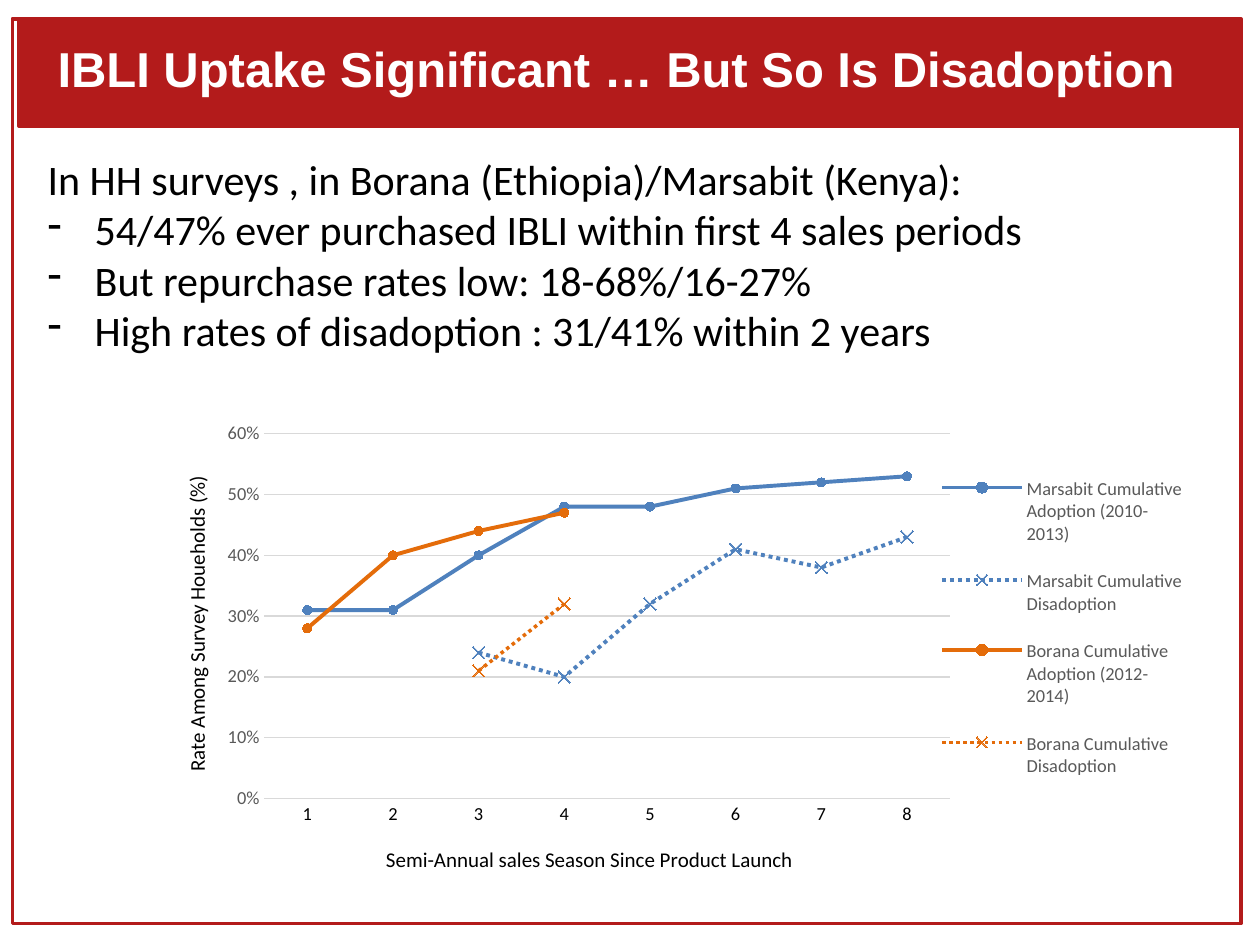
from lxml.etree import SubElement
from pptx import Presentation
from pptx.chart.data import CategoryChartData
from pptx.dml.color import RGBColor
from pptx.enum.chart import XL_CHART_TYPE, XL_LEGEND_POSITION, XL_MARKER_STYLE, XL_TICK_MARK
from pptx.enum.dml import MSO_LINE
from pptx.enum.shapes import MSO_SHAPE
from pptx.enum.text import MSO_ANCHOR, PP_ALIGN
from pptx.oxml import parse_xml
from pptx.oxml.ns import nsdecls, qn
from pptx.util import Cm, Pt

COLORS = {
    "red": "B31B1B", "white": "FFFFFF", "black": "000000", "gray": "595959",
    "grid": "D9D9D9", "marsabit": "4F81BD", "borana": "E46C0A",
}


def style_font(font, size, color, name="Calibri", bold=False):
    font.size, font.name, font.bold = Pt(size), name, bold
    font.color.rgb = RGBColor.from_string(COLORS[color])


def set_layout(element, index, **fractions):
    """Give a chart part a manual layout in fractions of the chart area."""
    for old in element.findall(qn("c:layout")):
        element.remove(old)
    layout = parse_xml(f"<c:layout {nsdecls('c')}><c:manualLayout/></c:layout>")
    manual = layout[0]
    if index == 0:
        SubElement(manual, qn("c:layoutTarget")).set("val", "inner")
    for key in ("x", "y"):
        SubElement(manual, qn(f"c:{key}Mode")).set("val", "edge")
    for key, value in fractions.items():
        SubElement(manual, qn(f"c:{key}")).set("val", str(value))
    element.insert(index, layout)


presentation = Presentation()
presentation.slide_width, presentation.slide_height = Cm(25.4), Cm(19.05)
slide = presentation.slides.add_slide(presentation.slide_layouts[5])

# Frame and title band
for left, top, width, height, fill in (
    (0.25, 0.38, 24.77, 18.24, "white"),
    (0.38, 0.38, 24.61, 2.16, "red"),
):
    shape = slide.shapes.add_shape(
        MSO_SHAPE.RECTANGLE, Cm(left), Cm(top), Cm(width), Cm(height))
    shape.shadow.inherit = False
    shape.fill.solid()
    shape.fill.fore_color.rgb = RGBColor.from_string(COLORS[fill])
    shape.line.color.rgb = RGBColor.from_string(COLORS["red"])
    shape.line.width = Pt(2)

# Title, brought in front of the band
title = slide.shapes.title
title.left, title.top, title.width, title.height = Cm(0.64), Cm(0.64), Cm(24.13), Cm(1.45)
title.element.getparent().append(title.element)
title.text_frame.text = "IBLI Uptake Significant … But So Is Disadoption"
title.text_frame.vertical_anchor = MSO_ANCHOR.MIDDLE
title.text_frame.margin_left = Cm(0.52)
paragraph = title.text_frame.paragraphs[0]
paragraph.alignment = PP_ALIGN.LEFT
style_font(paragraph.font, 28, "white", "Arial", True)

# Survey findings: a lead-in and dashed points
findings = slide.shapes.add_textbox(Cm(0.71), Cm(2.97), Cm(21.79), Cm(5.38))
findings.text_frame.word_wrap = True
findings.text_frame.text = "\n".join((
    "In HH surveys , in Borana (Ethiopia)/Marsabit (Kenya):",
    "54/47% ever purchased IBLI within first 4 sales periods",
    "But repurchase rates low: 18-68%/16-27%",
    "High rates of disadoption : 31/41% within 2 years",
))
for number, paragraph in enumerate(findings.text_frame.paragraphs):
    style_font(paragraph.font, 24, "black")
    if number:
        properties = paragraph._p.get_or_add_pPr()
        properties.set("marL", str(Cm(0.95)))
        properties.set("indent", str(-Cm(0.95)))
        properties.insert(0, parse_xml(f'<a:buChar {nsdecls("a")} char="-"/>'))

# Adoption and disadoption chart
series_rows = (
    ("Marsabit Cumulative Adoption (2010-2013)", "marsabit", 2.25, False,
     (0.31, 0.31, 0.4, 0.48, 0.48, 0.51, 0.52, 0.53)),
    ("Marsabit Cumulative Disadoption", "marsabit", 2.25, True,
     (None, None, 0.24, 0.2, 0.32, 0.41, 0.38, 0.43)),
    ("Borana Cumulative Adoption (2012-2014)", "borana", 2.25, False,
     (0.28, 0.4, 0.44, 0.47, None, None, None, None)),
    ("Borana Cumulative Disadoption", "borana", 2, True,
     (None, None, 0.21, 0.32, None, None, None, None)),
)
chart_data = CategoryChartData(number_format="0%")
chart_data.categories = [str(season) for season in range(1, 9)]
for name, color, width, dotted, values in series_rows:
    chart_data.add_series(name, values)
chart = slide.shapes.add_chart(
    XL_CHART_TYPE.LINE_MARKERS, Cm(2.74), Cm(8.26), Cm(21.59), Cm(9.68), chart_data).chart
chart.has_title = False
style_font(chart.font, 10, "black")
chart.plots[0].vary_by_categories = False

for series, (name, color, width, dotted, values) in zip(chart.plots[0].series, series_rows):
    rgb = RGBColor.from_string(COLORS[color])
    series.smooth = False
    series.format.line.color.rgb = rgb
    series.format.line.width = Pt(width)
    marker = series.marker
    marker.format.line.color.rgb = rgb
    if dotted:
        series.format.line.dash_style = MSO_LINE.ROUND_DOT
        marker.style, marker.size = XL_MARKER_STYLE.X, 7
        marker.format.fill.background()
    else:
        marker.style, marker.size = XL_MARKER_STYLE.CIRCLE, 5
        marker.format.fill.solid()
        marker.format.fill.fore_color.rgb = rgb

# Axes
for axis, text, color, x, y in (
    (chart.category_axis, "Semi-Annual sales Season Since Product Launch", "black", 0.23, 0.9),
    (chart.value_axis, "Rate Among Survey Houeholds (%)", "gray", 0.04, 0.13),
):
    axis.major_tick_mark = axis.minor_tick_mark = XL_TICK_MARK.NONE
    style_font(axis.tick_labels.font, 10.5, color)
    axis.axis_title.text_frame.text = text
    style_font(axis.axis_title.text_frame.paragraphs[0].font, 12, "black")
    set_layout(axis.axis_title.element if hasattr(axis.axis_title, "element")
               else axis.axis_title._element, 1, x=x, y=y)

category_line = chart.category_axis.format.line
grid_line = chart.value_axis.major_gridlines.format.line
for line in (category_line, grid_line):
    line.color.rgb = RGBColor.from_string(COLORS["grid"])
    line.width = Pt(0.75)
value_axis = chart.value_axis
value_axis.minimum_scale, value_axis.maximum_scale, value_axis.major_unit = 0, 0.6, 0.1
value_axis.tick_labels.number_format = "0%"
value_axis.tick_labels.number_format_is_linked = False
value_axis.format.line.fill.background()
for body in chart.element.xpath(".//c:valAx/c:title//a:bodyPr"):
    body.set("rot", "-5400000")
    body.set("vert", "horz")

# Legend beside the plot
chart.has_legend = True
chart.legend.position = XL_LEGEND_POSITION.BOTTOM
chart.legend.include_in_layout = False
style_font(chart.legend.font, 10.5, "gray")
set_layout(chart.element.xpath(".//c:legend")[0], 1, x=0.75, y=0.09, w=0.23, h=0.73)
set_layout(chart.element.xpath(".//c:plotArea")[0], 0, x=0.12, y=0.05, w=0.64, h=0.76)

presentation.save("out.pptx")
